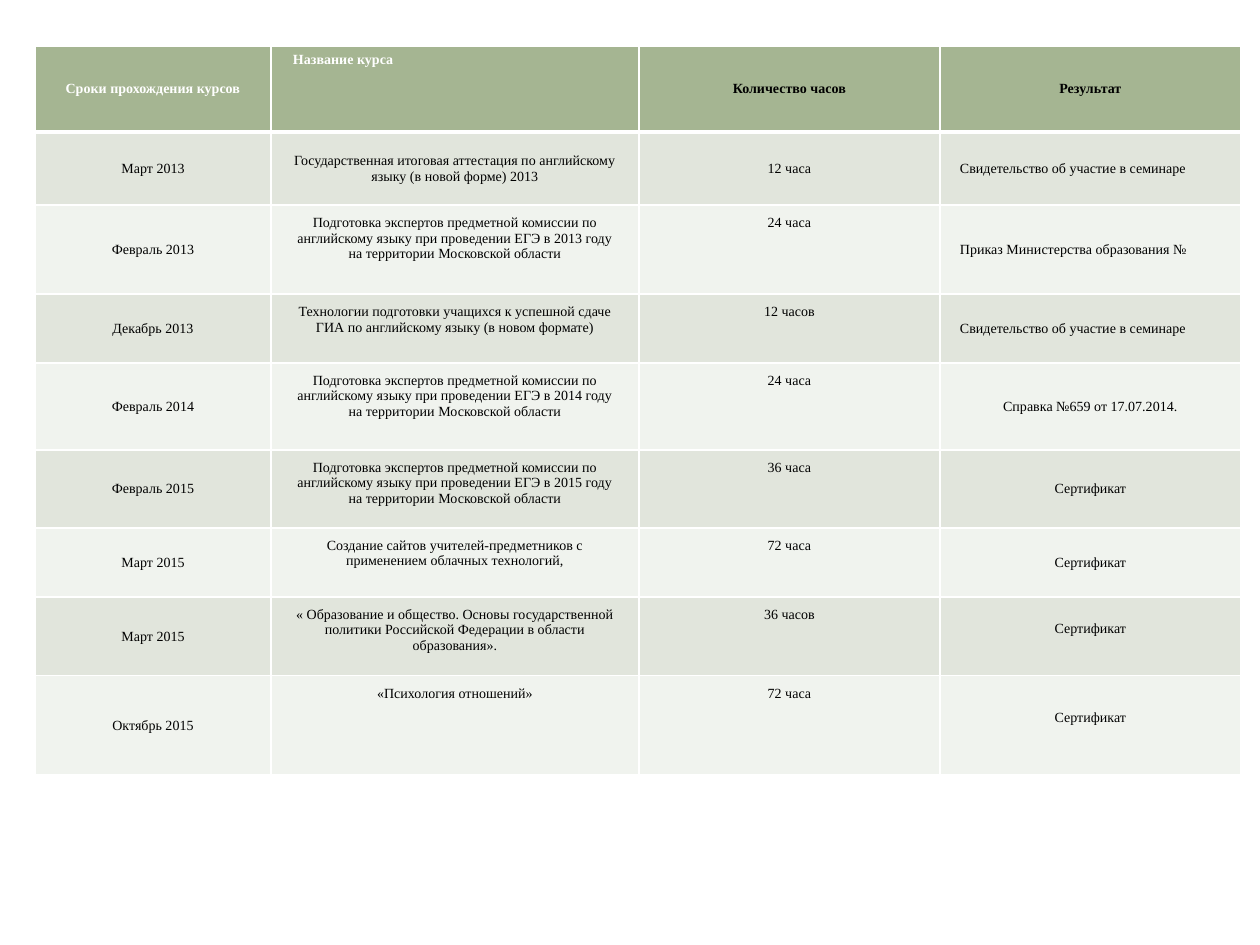
from dataclasses import dataclass

from lxml import etree
from pptx import Presentation
from pptx import util as u
from pptx.dml.color import RGBColor
from pptx.enum import text
from pptx.oxml import ns


@dataclass(frozen=True)
class Theme:
    """Colours, font and sizes in points."""
    font: str = "Times New Roman"
    size: int = 8
    header: str = "A5B592"
    bands: tuple = ("E1E5DC", "F0F3EE")
    white: str = "FFFFFF"
    black: str = "000000"
    line: int = 1
    header_line: int = 3


THEME = Theme()
COLS = (236, 368, 301, 301)
ROWS = (86, 73, 89, 69, 87, 78, 69, 79, 99)
INSET = 10
LINE_HEIGHT = 16

EXPERTS = ("Подготовка экспертов предметной комиссии по английскому языку "
           "при проведении ЕГЭ в {} году на территории Московской области")
SEMINAR = "Свидетельство об участие в семинаре"
ORDER = "Приказ Министерства образования №"
CERTIFICATE = "Сертификат"
HEADER = ("Сроки прохождения курсов", "Название курса", "Количество часов", "Результат")
COURSES = (
    ("Март 2013", "Государственная итоговая аттестация по английскому языку "
     "(в новой форме) 2013", "12 часа", SEMINAR),
    ("Февраль 2013", EXPERTS.format(2013), "24 часа", ORDER),
    ("Декабрь 2013", "Технологии подготовки учащихся к успешной сдаче ГИА "
     "по английскому языку (в новом формате)", "12 часов", SEMINAR),
    ("Февраль 2014", EXPERTS.format(2014), "24 часа", "Справка №659 от 17.07.2014."),
    ("Февраль 2015", EXPERTS.format(2015), "36 часа", CERTIFICATE),
    ("Март 2015", "Создание сайтов учителей-предметников с применением "
     "облачных технологий,", "72 часа", CERTIFICATE),
    ("Март 2015", "« Образование и общество. Основы государственной политики "
     "Российской Федерации в области образования».", "36 часов", CERTIFICATE),
    ("Октябрь 2015", "«Психология отношений»", "72 часа", CERTIFICATE),
)


def px(n):
    """Turn pixels into EMU."""
    return u.Emu(round(n * 914400 / 126))


def set_attrs(obj, values):
    """Set attributes from a dict."""
    for name, value in values.items():
        setattr(obj, name, value)


def set_borders(cell, bottom):
    """Draw white borders, with the given bottom width."""
    tcPr = cell._tc.get_or_add_tcPr()
    sides = {"L": THEME.line, "R": THEME.line, "T": THEME.line, "B": bottom}
    for i, (side, width) in enumerate(sides.items()):
        ln = etree.Element(ns.qn(f"a:ln{side}"), w=str(u.Pt(width)))
        fill = etree.SubElement(ln, ns.qn("a:solidFill"))
        etree.SubElement(fill, ns.qn("a:srgbClr"), val=THEME.white)
        tcPr.insert(i, ln)


def cell_format(row, col, value):
    """Return the margins and anchor of a cell."""
    margins = dict.fromkeys(
        ("margin_left", "margin_right", "margin_top", "margin_bottom"), px(INSET))
    middle = col in (0, 3) or row == 1 or (row, col) == (0, 2)
    if (row, col) == (0, 1):
        margins.update(margin_left=px(22), margin_top=px(6))
    elif row >= 7 and value == CERTIFICATE:
        margins["margin_bottom"] = px(INSET + LINE_HEIGHT)
    anchor = text.MSO_ANCHOR.MIDDLE if middle else text.MSO_ANCHOR.TOP
    return {**margins, "vertical_anchor": anchor}


def fill_cell(cell, row, col, value):
    """Write and format one table cell."""
    header = row == 0
    set_attrs(cell, cell_format(row, col, value))
    cell.fill.solid()
    cell.fill.fore_color.rgb = RGBColor.from_string(
        THEME.header if header else THEME.bands[(row - 1) % 2])
    set_borders(cell, THEME.header_line if header else THEME.line)
    p = cell.text_frame.paragraphs[0]
    left = (row, col) == (0, 1) or value in (SEMINAR, ORDER)
    p.alignment = text.PP_ALIGN.LEFT if left else text.PP_ALIGN.CENTER
    if (row, col) != (0, 1) and (col < 3 or row < 4):
        for side in ("marL", "marR"):
            p._p.get_or_add_pPr().set(side, str(px(INSET)))
    r = p.add_run()
    r.text = value
    set_attrs(r.font, {"name": THEME.font, "size": u.Pt(THEME.size), "bold": header})
    r.font.color.rgb = RGBColor.from_string(
        THEME.white if header and col < 2 else THEME.black)


def add_courses(slide, x, y):
    """Place the table of courses with its corner at x, y."""
    data = (HEADER, *COURSES)
    table = slide.shapes.add_table(
        len(ROWS), len(COLS), px(x), px(y), px(sum(COLS)), px(sum(ROWS))).table
    table.horz_banding = False
    for column, width in zip(table.columns, COLS):
        column.width = px(width)
    for i, height in enumerate(ROWS):
        table.rows[i].height = px(height)
        for j, value in enumerate(data[i]):
            fill_cell(table.cell(i, j), i, j, value)


def main():
    """Build and save the slide."""
    prs = Presentation()
    set_attrs(prs, {"slide_width": px(1260), "slide_height": px(945)})
    slide = prs.slides.add_slide(prs.slide_layouts[6])
    add_courses(slide, 35, 46)
    prs.save("out.pptx")


if __name__ == "__main__":
    main()
